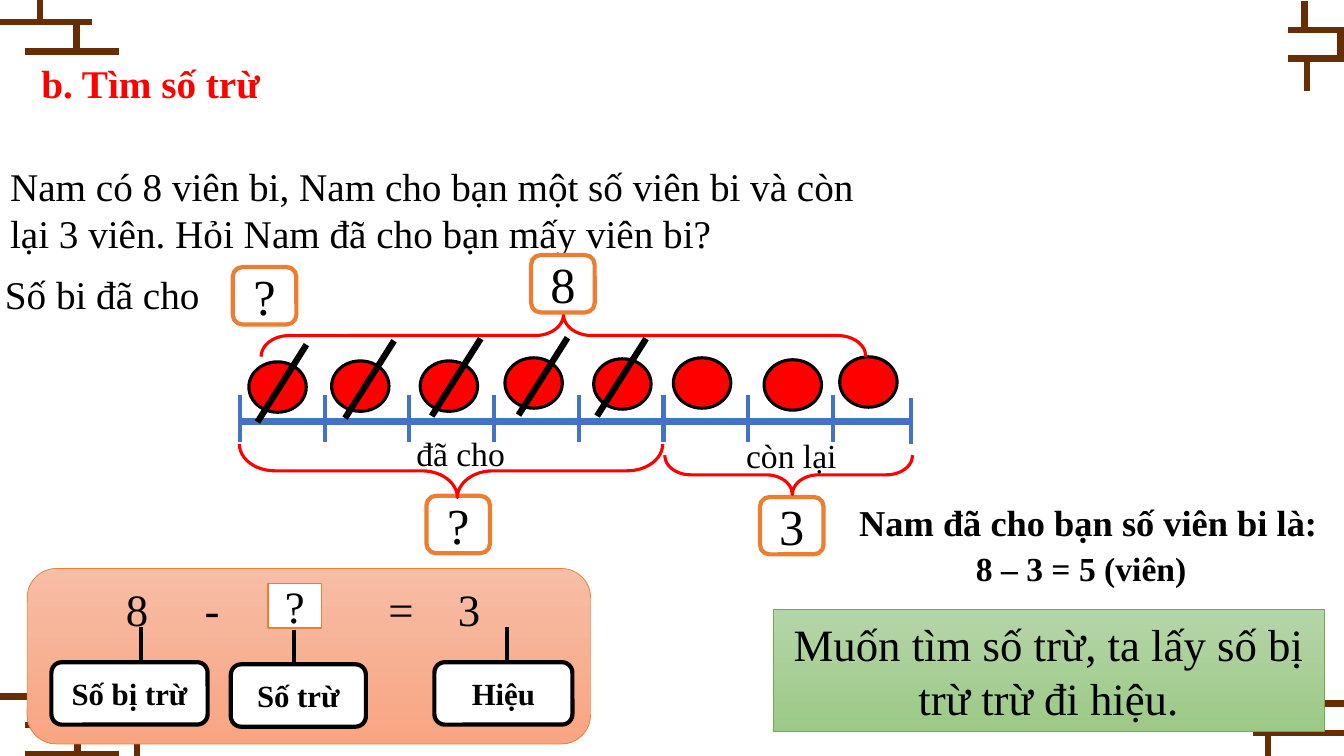
from dataclasses import dataclass

from pptx import Presentation
from pptx.dml.color import RGBColor
from pptx.enum.shapes import MSO_CONNECTOR as CONN, MSO_SHAPE as SHAPE
from pptx.enum.text import MSO_ANCHOR as ANCHOR, MSO_AUTO_SIZE as AUTO, PP_ALIGN as ALIGN
from pptx.oxml.ns import qn
from pptx.util import Pt
from lxml import etree


@dataclass(frozen=True)
class Theme:
    font: str = "Times New Roman"
    black: str = "000000"
    white: str = "FFFFFF"
    red: str = "FF0000"
    blue: str = "4472C4"
    orange: str = "ED7D31"
    green: str = "70AD47"
    brown: str = "672E05"
    peach: tuple = ("F7BDA5", "F8A582")
    leaf: tuple = ("B5D5A7", "9CC987")
    number: int = 36
    equation: int = 32
    body: int = 28
    answer: int = 26
    label: int = 24
    term: int = 22


T = Theme()


def write_text(s, text, size=T.body, color=T.black, bold=False,
               align=ALIGN.LEFT, anchor=ANCHOR.TOP):
    tf = s.text_frame
    tf.word_wrap = True
    tf.auto_size = AUTO.NONE
    tf.vertical_anchor = anchor
    p = tf.paragraphs[0]
    p.alignment = align
    p.space_before = Pt(0)
    r = p.add_run()
    r.text = text
    r.font.name = T.font
    r.font.size = Pt(size)
    r.font.bold = bold
    r.font.color.rgb = RGBColor.from_string(color)
    return p


class Sketch:
    """Draws on one slide; all lengths are in points."""

    def __init__(self, slide, theme):
        self.slide = slide
        self.theme = theme

    def placeholder(self, idx, box, text, **fmt):
        s = self.slide.placeholders[idx]
        s.left, s.top, s.width, s.height = map(Pt, box)
        p = write_text(s, text, **fmt)
        pPr = p._p.get_or_add_pPr()
        pPr.set("marL", "0")
        pPr.set("indent", "0")
        etree.SubElement(pPr, qn("a:buNone"))

    def text(self, box, text, **fmt):
        s = self.slide.shapes.add_textbox(*map(Pt, box))
        write_text(s, text, **fmt)

    def shape(self, kind, box, fill=None, line=T.black, width=3.0, text=None, **fmt):
        s = self.slide.shapes.add_shape(kind, *map(Pt, box))
        s.shadow.inherit = False
        if fill is None:
            s.fill.background()
        elif isinstance(fill, tuple):
            s.fill.gradient()
            s.fill.gradient_angle = 270
            for stop, color in zip(s.fill.gradient_stops, fill):
                stop.color.rgb = RGBColor.from_string(color)
        else:
            s.fill.solid()
            s.fill.fore_color.rgb = RGBColor.from_string(fill)
        s.line.color.rgb = RGBColor.from_string(line)
        s.line.width = Pt(width)
        if text:
            write_text(s, text, align=ALIGN.CENTER, anchor=ANCHOR.MIDDLE, **fmt)
        return s

    def line(self, x1, y1, x2, y2, color=T.black, width=3.0):
        s = self.slide.shapes.add_connector(CONN.STRAIGHT, *map(Pt, (x1, y1, x2, y2)))
        s.line.color.rgb = RGBColor.from_string(color)
        s.line.width = Pt(width)
        etree.SubElement(s._element.spPr, qn("a:effectLst"))

    def brace(self, x, y, w, h, rotation, tip):
        # The unrotated frame shares its centre with the visible box
        frame = (x + (w - h) / 2, y + (h - w) / 2, h, w)
        s = self.shape(SHAPE.LEFT_BRACE, frame, line=self.theme.red, width=2.25)
        s.rotation = rotation
        s.adjustments[0], s.adjustments[1] = 0.665, tip

    def number_box(self, x, y, text):
        self.shape(SHAPE.ROUNDED_RECTANGLE, (x, y, 45.4, 41), self.theme.white,
                   self.theme.orange, text=text, size=self.theme.number)

    def term(self, x, y, w, stem_x, text):
        self.line(stem_x, y - 24.8, stem_x, y)
        self.shape(SHAPE.ROUNDED_RECTANGLE, (x, y, w, 44.6), self.theme.white,
                   text=text, size=self.theme.term, bold=True)


CORNERS = [
    # top left
    (28.8, 0, 28.8, 15.8), (0, 15.8, 65.5, 15.8),
    (54.7, 14.4, 54.7, 36.7), (18, 36.7, 85, 36.7),
    # bottom left
    (31.7, 536.4, 31.7, 540), (18, 538.6, 85, 538.6), (55.4, 517.7, 55.4, 540),
    (97.9, 517.7, 97.9, 540), (18, 517.7, 85, 517.7),
    (29.5, 497.5, 29.5, 519.8), (0, 497.5, 66.2, 497.5),
    # top right
    (933.8, 39.6, 933.8, 64.8), (920.2, 41.8, 960, 41.8), (957.6, 21.6, 957.6, 43.2),
    (920.2, 21.6, 960, 21.6), (931.7, 0.7, 931.7, 23),
    # bottom right
    (908.6, 479.5, 908.6, 504.7), (895, 502.6, 960, 502.6), (931.7, 501.1, 931.7, 523.4),
    (895, 523.4, 960, 523.4), (905.8, 521.3, 905.8, 540),
]
MARBLES = [(177.8, 258.5), (236.9, 257.8), (300.2, 257.8), (360.7, 255.6),
           (424.1, 256.3), (481, 255.6), (545.8, 257), (599.8, 254.9)]
SLASHES = [(218.9, 246.2), (281.5, 243.4), (343.4, 241.9), (405.4, 241.2), (461.5, 241.9)]


def main():
    prs = Presentation()
    prs.slide_width, prs.slide_height = Pt(960), Pt(540)
    sk = Sketch(prs.slides.add_slide(prs.slide_layouts[1]), T)

    # Brick corners
    for ends in CORNERS:
        sk.line(*ends, color=T.brown, width=4.5)

    # Heading and problem
    sk.placeholder(0, (22.3, 38.9, 656, 41), "b. Tìm số trừ", color=T.red, bold=True)
    sk.placeholder(1, (0, 112.3, 649.4, 75),
                   "Nam có 8 viên bi, Nam cho bạn một số viên bi và còn lại 3 viên. "
                   "Hỏi Nam đã cho bạn mấy viên bi?")
    sk.text((-3.6, 189.4, 217.4, 41), "Số bi đã cho")
    sk.number_box(166.3, 190.8, "?")

    # Number line
    for i in range(8):
        x = 171.4 + 60.5 * i
        sk.line(x, 282.2, x, 315.4, T.blue)
    sk.line(171.4, 301, 650.9, 301, T.blue, 4.5)
    sk.line(650.9, 284.4, 650.9, 317.5, T.blue)

    # Marbles, the given ones crossed out
    for x, y in MARBLES:
        sk.shape(SHAPE.OVAL, (x, y, 41, 36), T.red, width=2.25)
    for x, y in SLASHES:
        sk.line(x, y, x - 35, y + 55.3, width=4.5)

    # Braces with their counts
    sk.number_box(304.6, 354.2, "?")
    sk.number_box(542.9, 355, "3")
    sk.brace(171, 317.2, 302.4, 38.2, 270, 0.515)
    sk.brace(474.8, 325.1, 177.1, 28.1, 270, 0.515)
    sk.text((234, 306, 190, 36), "đã cho", size=T.label, align=ALIGN.CENTER)
    sk.text((470.2, 307.4, 190, 36), "còn lại", size=T.label, align=ALIGN.CENTER)
    sk.brace(186.5, 224.6, 432, 30.2, 90, 0.5)
    sk.number_box(379.4, 182.2, "8")

    # Equation panel
    sk.shape(SHAPE.ROUNDED_RECTANGLE, (19.4, 406.1, 402.5, 125.3), T.peach, T.orange, 0.5)
    for center, sign in ((98, "8"), (151.5, "-"), (286.5, "="), (335, "3")):
        sk.text((center - 20, 411.8, 40, 46), sign, size=T.equation, align=ALIGN.CENTER)
    sk.shape(SHAPE.RECTANGLE, (191.5, 416.9, 38.2, 31.7), T.white, T.orange, 1,
             text="?", size=T.equation)
    sk.term(36.7, 473, 111.6, 100.8, "Số bị trừ")
    sk.term(164.9, 474.5, 96.5, 210.2, "Số trừ")
    sk.term(310.3, 473, 98.6, 362.2, "Hiệu")

    # Answer and rule
    sk.text((570.2, 353.5, 414.7, 38.9), "Nam đã cho bạn số viên bi là:",
            size=T.answer, bold=True, align=ALIGN.CENTER)
    sk.text((576, 388.1, 392.4, 36), "8 – 3 = 5 (viên)",
            size=T.label, bold=True, align=ALIGN.CENTER)
    sk.shape(SHAPE.RECTANGLE, (552.2, 435.6, 393.8, 87.1), T.leaf, T.green, 0.5,
             text="Muốn tìm số trừ, ta lấy số bị trừ trừ đi hiệu.", size=T.equation)

    prs.save("out.pptx")


if __name__ == "__main__":
    main()
